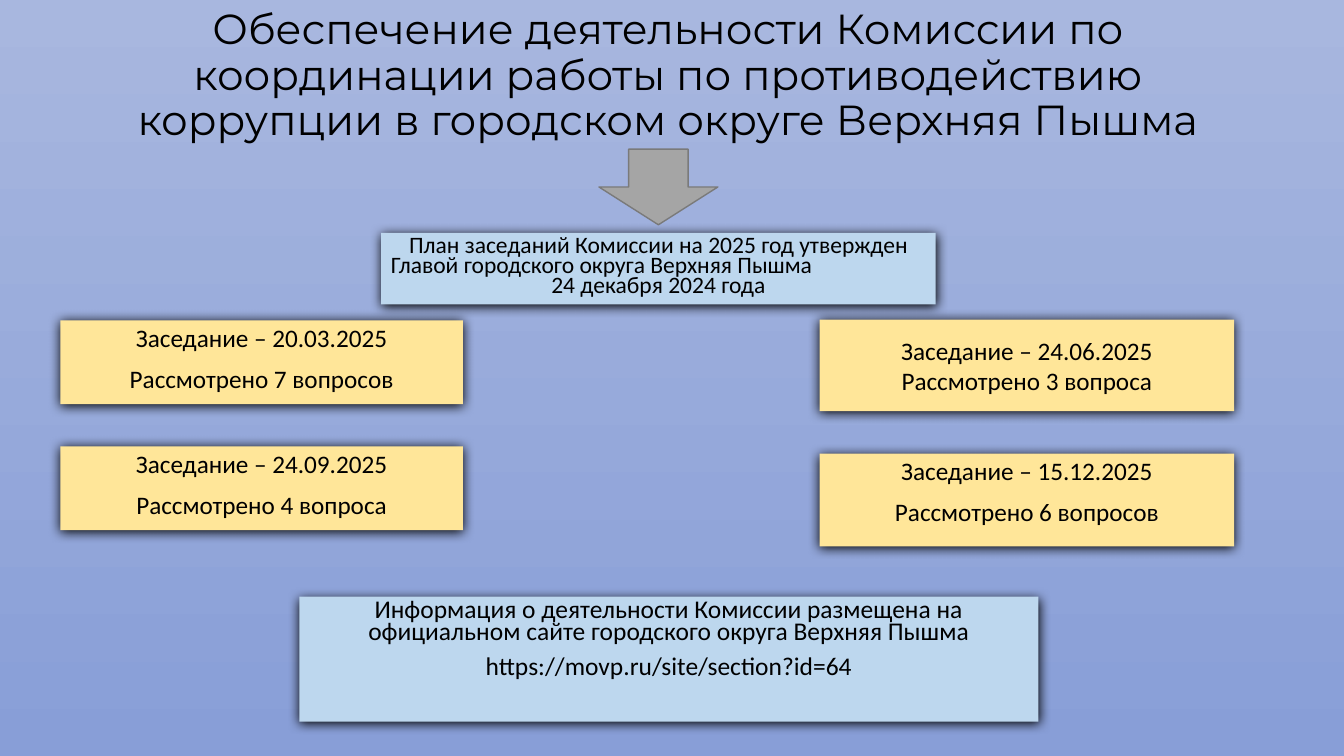
from lxml import etree
from pptx import Presentation
from pptx import util as u
from pptx.dml.color import RGBColor
from pptx.enum import shapes, text
from pptx.oxml.ns import qn

COLORS = {
    "sky_top": "A8B7DF",
    "sky_bottom": "889ED7",
    "meeting": "FFE699",
    "notice": "BDD7EE",
    "arrow": "A5A5A5",
    "arrow_edge": "7A7A7A",
    "ink": "000000",
}
CENTER, LEFT = text.PP_ALIGN.CENTER, text.PP_ALIGN.LEFT
TOP, MIDDLE = text.MSO_ANCHOR.TOP, text.MSO_ANCHOR.MIDDLE


def color(name):
    return RGBColor.from_string(COLORS[name])


class Slide:
    def __init__(self, page, font="Calibri"):
        self.page = page
        self.font = font

    def background(self):
        fill = self.page.background.fill
        fill.gradient()
        fill.gradient_angle = 270
        for stop, place, name in zip(fill.gradient_stops, (0, 1), ("sky_top", "sky_bottom")):
            stop.position = place
            stop.color.rgb = color(name)

    def add_lines(self, box, lines, size, anchor=TOP, spacing=0.9, before=0, font=None, aligns=None):
        frame = box.text_frame
        frame.word_wrap = True
        frame.vertical_anchor = anchor
        for index, line in enumerate(lines):
            para = frame.add_paragraph() if index else frame.paragraphs[0]
            para.alignment = aligns[index] if aligns else CENTER
            para.line_spacing = spacing
            para.space_before = u.Pt(before if index else 0)
            span = para.add_run()
            span.text = line
            span.font.name = font or self.font
            span.font.size = u.Pt(size)
            span.font.color.rgb = color("ink")

    def title(self, place, line):
        box = self.page.shapes.add_textbox(*map(u.Inches, place))
        self.add_lines(box, [line], 30, MIDDLE, font="Montserrat")

    def shape(self, kind, place, fill, edge=None):
        shape = self.page.shapes.add_shape(kind, *map(u.Inches, place))
        shape.shadow.inherit = False
        shape.fill.solid()
        shape.fill.fore_color.rgb = color(fill)
        if edge:
            shape.line.color.rgb = color(edge)
            shape.line.width = u.Pt(1)
        else:
            shape.line.fill.background()
        return shape

    def card(self, place, fill, lines, size, **style):
        card = self.shape(shapes.MSO_SHAPE.RECTANGLE, place, fill)
        effects = card._element.spPr.find(qn("a:effectLst"))
        shadow = etree.SubElement(effects, qn("a:outerShdw"), blurRad=str(u.Pt(8.5)),
                                  dist=str(u.Pt(1)), dir="5400000", rotWithShape="0")
        etree.SubElement(shadow, qn("a:srgbClr"), val=COLORS["ink"])
        self.add_lines(card, lines, size, **style)


def main():
    deck = Presentation()
    deck.slide_width, deck.slide_height = u.Inches(13.33), u.Inches(7.5)
    slide = Slide(deck.slides.add_slide(deck.slide_layouts[6]))
    slide.background()

    # Heading and arrow
    slide.title((0.6, 0.24, 12.05, 1.04),
                "Обеспечение деятельности Комиссии по координации работы по "
                "противодействию коррупции в городском округе Верхняя Пышма")
    slide.shape(shapes.MSO_SHAPE.DOWN_ARROW, (5.94, 1.48, 1.18, 0.75), "arrow", "arrow_edge")

    # Approved plan
    slide.card((3.78, 2.31, 5.5, 0.71), "notice",
               ["План заседаний Комиссии на 2025 год утвержден",
                "Главой городского округа Верхняя Пышма",
                "24 декабря 2024 года"],
               16.8, spacing=0.7, aligns=(CENTER, LEFT, CENTER))

    # Meetings
    spaced = {"before": 10}
    compact = {"anchor": MIDDLE, "spacing": 1}
    meetings = [
        ((0.6, 3.18, 3.99, 0.83), "20.03.2025", "7 вопросов", spaced),
        ((8.13, 3.17, 4.11, 0.91), "24.06.2025", "3 вопроса", compact),
        ((0.6, 4.43, 3.99, 0.83), "24.09.2025", "4 вопроса", spaced),
        ((8.13, 4.5, 4.11, 0.92), "15.12.2025", "6 вопросов", spaced),
    ]
    for place, date, count, style in meetings:
        slide.card(place, "meeting", [f"Заседание – {date}", f"Рассмотрено {count}"], 18, **style)

    # Where to read more
    slide.card((2.97, 5.92, 7.33, 1.24), "notice",
               ["Информация о деятельности Комиссии размещена на "
                "официальном сайте городского округа Верхняя Пышма",
                "https://movp.ru/site/section?id=64"],
               18.2, spacing=0.7, before=10)

    deck.save("out.pptx")


if __name__ == "__main__":
    main()
